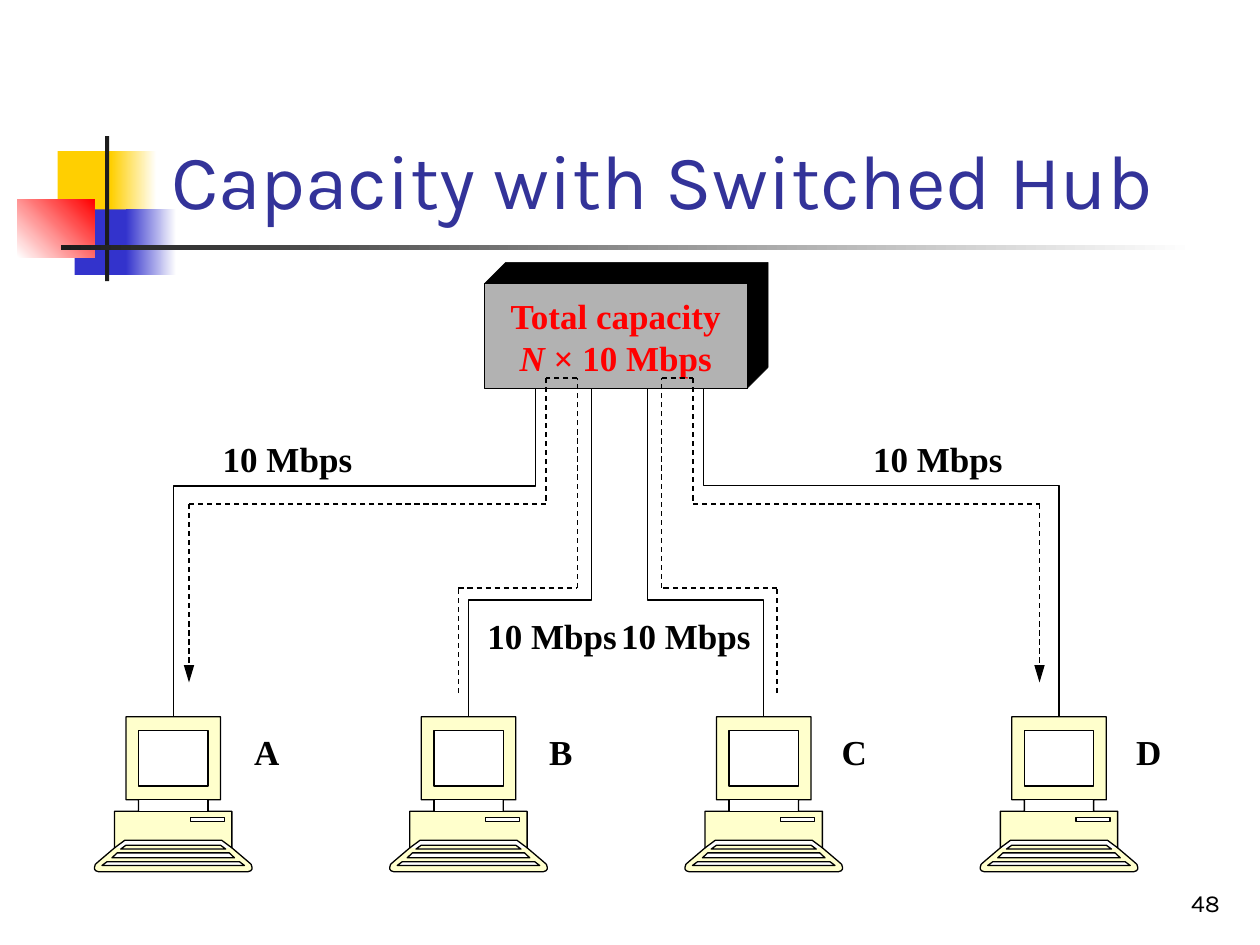
from itertools import pairwise

from lxml import etree
from pptx import Presentation
from pptx.dml.color import RGBColor
from pptx.enum.dml import MSO_LINE
from pptx.enum.shapes import MSO_CONNECTOR as Connector, MSO_SHAPE as Shape
from pptx.enum.text import MSO_ANCHOR as Anchor, PP_ALIGN as Align
from pptx.oxml.ns import qn
from pptx.util import Pt

# Content: boxes are left, top, width, height in points
TITLE = "Capacity with Switched Hub"
PAGE_NUMBER = "48"
HUB_RUNS = [("Total capacity ", False), ("N", True), (" × 10 Mbps", False)]
LABELS = [
    ("10 Mbps", 120.2, 246.2), ("10 Mbps", 491.8, 246.2),
    ("10 Mbps", 347.8, 347.8), ("10 Mbps", 271.4, 347.8),
    ("A", 138.2, 414), ("B", 306.7, 414), ("C", 473.8, 414), ("D", 642.2, 414),
]
# Decoration: box, fill colours (two make a gradient), gradient angle
DECORATION = [
    ((33, 86.4, 34.6, 37.4), ["FFCF01"], 0),
    ((63.4, 86.4, 26, 37.4), ["FFCF01", "FFFFFF"], 0),
    ((42.6, 119.7, 33.1, 37.4), ["3333CC"], 0),
    ((72, 119.7, 28.8, 37.4), ["3333CC", "FFFFFF"], 0),
    ((10, 113.8, 44, 33.3), ["FFFFFF", "FF0000"], 45),
    ((60, 77.8, 2.4, 82.8), ["1C1C1C"], 0),
    ((34.8, 140.2, 648, 2.4), ["1C1C1C", "FFFFFF"], 0),
]
HUB, HUB_DEPTH = (276.9, 162, 150, 60), 12

# Computers: x is measured from the centre line, y from the top
FIRST_CENTRE, CENTRE_STEP, COMPUTER_TOP, COMPUTERS = 99, 168.72, 409.6, 4
OUTLINE_HALF = [
    (27, 0), (27, 47.5), (19.8, 47.5), (19.8, 54), (33.5, 54), (33.5, 74.9),
    (42.8, 82.8), (43.6, 83.5), (44.5, 84.3), (45, 86), (45, 87), (44.3, 88), (42.5, 88.6),
]
# Symmetric parts: half width and y at the top, then at the bottom
TRAPEZOIDS = [
    (27, 73.4, 30, 75.6), (32, 77.8, 35, 80.6), (37.8, 82.8, 40.7, 85),
    (19.8, 7.9, 19.8, 39.6), (19.8, 47.5, 19.8, 54),
]
DESK_EDGE = [(33.5, 74.9), (27.7, 70.6), (-27.7, 70.6), (-33.5, 74.9)]
DRIVE_SLOT = [(9.7, 57.6), (9.7, 59.8), (29.2, 59.8), (29.2, 57.6)]

# Cables: port x and the share of the drop at which each cable turns
FIRST_PORT, PORT_STEP, CABLE_START = 306, 32, 276
CABLE_TURNS = [0.013, 0.5, 0.5, 0.01]
ROUTES = [
    [(444, 396), (444, 336), (378, 336), (378, 216),
     (396, 216), (396, 288), (594, 288), (594, 390)],
    [(262, 396), (262, 336), (330, 336), (330, 216),
     (312, 216), (312, 288), (108, 288), (108, 390)],
]
TITLE_FONT = {"name": "Karla", "size": Pt(44)}
NUMBER_FONT = {"name": "Karla", "size": Pt(14)}
LABEL_FONT = {"name": "Times New Roman", "size": Pt(20), "bold": True}


def rgb(value):
    return RGBColor.from_string(value)


def points(values):
    return [Pt(value) for value in values]


def add_run(paragraph, text, font, color="000000", **extra):
    run = paragraph.add_run()
    run.text = text
    for name, value in {**font, **extra}.items():
        setattr(run.font, name, value)
    run.font.color.rgb = rgb(color)


def add_text(shapes, box, text, font, color="000000", wrap=True, anchor=Anchor.TOP, align=Align.LEFT):
    frame = shapes.add_textbox(*points(box)).text_frame
    frame.word_wrap, frame.vertical_anchor = wrap, anchor
    frame.paragraphs[0].alignment = align
    add_run(frame.paragraphs[0], text, font, color)


def style_shape(shape, colors, line=None, angle=0):
    shape.shadow.inherit = False
    if len(colors) == 1:
        shape.fill.solid()
        shape.fill.fore_color.rgb = rgb(colors[0])
    else:
        shape.fill.gradient()
        shape.fill.gradient_angle = angle
        for stop, color in zip(shape.fill.gradient_stops, colors):
            stop.color.rgb = rgb(color)
    if line:
        shape.line.color.rgb, shape.line.width = rgb("000000"), Pt(line)
    else:
        shape.line.fill.background()


def add_rectangle(shapes, box, colors, line=None, angle=0):
    shape = shapes.add_shape(Shape.RECTANGLE, *points(box))
    style_shape(shape, colors, line, angle)
    return shape


def add_freeform(shapes, contours, color, line):
    """Draw (vertices, closed) contours, each as its own path of one shape."""
    builder = None
    for vertices, closed in contours:
        start, *rest = [points(vertex) for vertex in vertices]
        if builder is None:
            builder = shapes.build_freeform(*start, scale=1)
        else:
            builder.move_to(*start)
        builder.add_line_segments(rest, close=closed)
    shape = builder.convert_to_shape()
    path = shape._element.find(".//" + qn("a:path"))
    target = path
    for step in list(path):
        if step.tag == qn("a:moveTo") and step is not path[0]:
            target = etree.SubElement(path.getparent(), qn("a:path"), dict(path.attrib))
        target.append(step)
    style_shape(shape, [color], line)


def add_line(shapes, start, end, kind=Connector.STRAIGHT, dashed=False, arrow=False):
    connector = shapes.add_connector(kind, *points(start + end))
    connector.line.color.rgb, connector.line.width = rgb("000000"), Pt(0.75)
    if dashed:
        connector.line.dash_style = MSO_LINE.DASH
    properties = connector._element.spPr
    if arrow:
        etree.SubElement(properties.find(qn("a:ln")), qn("a:tailEnd"),
                         type="triangle", w="med", len="lg")
    etree.SubElement(properties, qn("a:effectLst"))
    return connector


def add_cable(shapes, start, end, turn):
    """An elbow that leaves downwards: a sideways one turned a quarter."""
    (x1, y1), (x2, y2) = start, end
    drop, reach = y2 - y1, abs(x2 - x1)
    left, top = (x1 + x2 - drop) / 2, (y1 + y2 - reach) / 2
    connector = add_line(shapes, (left, top), (left + drop, top + reach), Connector.ELBOW)
    properties = connector._element.spPr
    frame = properties.find(qn("a:xfrm"))
    frame.set("rot", str((90 if x2 < x1 else 270) * 60000))
    if x2 > x1:
        frame.set("flipH", "1")
    etree.SubElement(properties.find(".//" + qn("a:avLst")), qn("a:gd"),
                     name="adj1", fmla=f"val {round(turn * 100000)}")


def computer_contours(centre):
    outline = OUTLINE_HALF + [(-x, y) for x, y in reversed(OUTLINE_HALF)]
    trapezoids = [[(-a, top), (a, top), (b, bottom), (-b, bottom)]
                  for a, top, b, bottom in TRAPEZOIDS]
    parts = [(part, True) for part in [outline, *trapezoids, DRIVE_SLOT]]
    parts.insert(4, (DESK_EDGE, False))
    return [([(centre + x, COMPUTER_TOP + y) for x, y in part], closed)
            for part, closed in parts]


def main():
    presentation = Presentation()
    presentation.slide_width, presentation.slide_height = Pt(720), Pt(540)
    shapes = presentation.slides.add_slide(presentation.slide_layouts[6]).shapes

    # Decoration, page number and title
    for box, colors, angle in DECORATION:
        add_rectangle(shapes, box, colors, angle=angle)
    add_text(shapes, (554.4, 491.8, 149.8, 36), PAGE_NUMBER, NUMBER_FONT,
             anchor=Anchor.BOTTOM, align=Align.RIGHT)
    add_text(shapes, (90.7, 16.6, 613.4, 115.2), TITLE, TITLE_FONT, "333399", anchor=Anchor.BOTTOM)

    # Computers and labels
    centres = [FIRST_CENTRE + i * CENTRE_STEP for i in range(COMPUTERS)]
    for centre in centres:
        add_freeform(shapes, computer_contours(centre), "FFFFCC", 0.75)
    for text, left, top in LABELS:
        width = 88.6 if len(text) > 1 else 28.8
        add_text(shapes, (left, top, width, 31), text, LABEL_FONT, wrap=False)

    # Hub: dark depth behind a grey front
    left, top, width, height = HUB
    right, bottom, depth = left + width, top + height, HUB_DEPTH
    sides = [(left, top), (left + depth, top - depth), (right + depth, top - depth),
             (right + depth, bottom - depth), (right, bottom), (right, top)]
    add_freeform(shapes, [(sides, True)], "000000", 0.25)
    frame = add_rectangle(shapes, HUB, ["B2B2B2"], 0.25).text_frame
    frame.word_wrap, frame.vertical_anchor = True, Anchor.MIDDLE
    frame.paragraphs[0].alignment = Align.CENTER
    for text, italic in HUB_RUNS:
        add_run(frame.paragraphs[0], text, LABEL_FONT, "FF0000", italic=italic)

    # Cables from the hub ports to the computers
    for i, (centre, turn) in enumerate(zip(centres, CABLE_TURNS)):
        port = FIRST_PORT + i * PORT_STEP
        add_line(shapes, (port, bottom), (port, CABLE_START))
        add_cable(shapes, (port, CABLE_START), (centre, COMPUTER_TOP), turn)

    # Dashed traffic routes, with an arrow on the last leg
    for route in ROUTES:
        for start, end in pairwise(route):
            add_line(shapes, start, end, dashed=True, arrow=end == route[-1])

    presentation.save("out.pptx")


if __name__ == "__main__":
    main()
